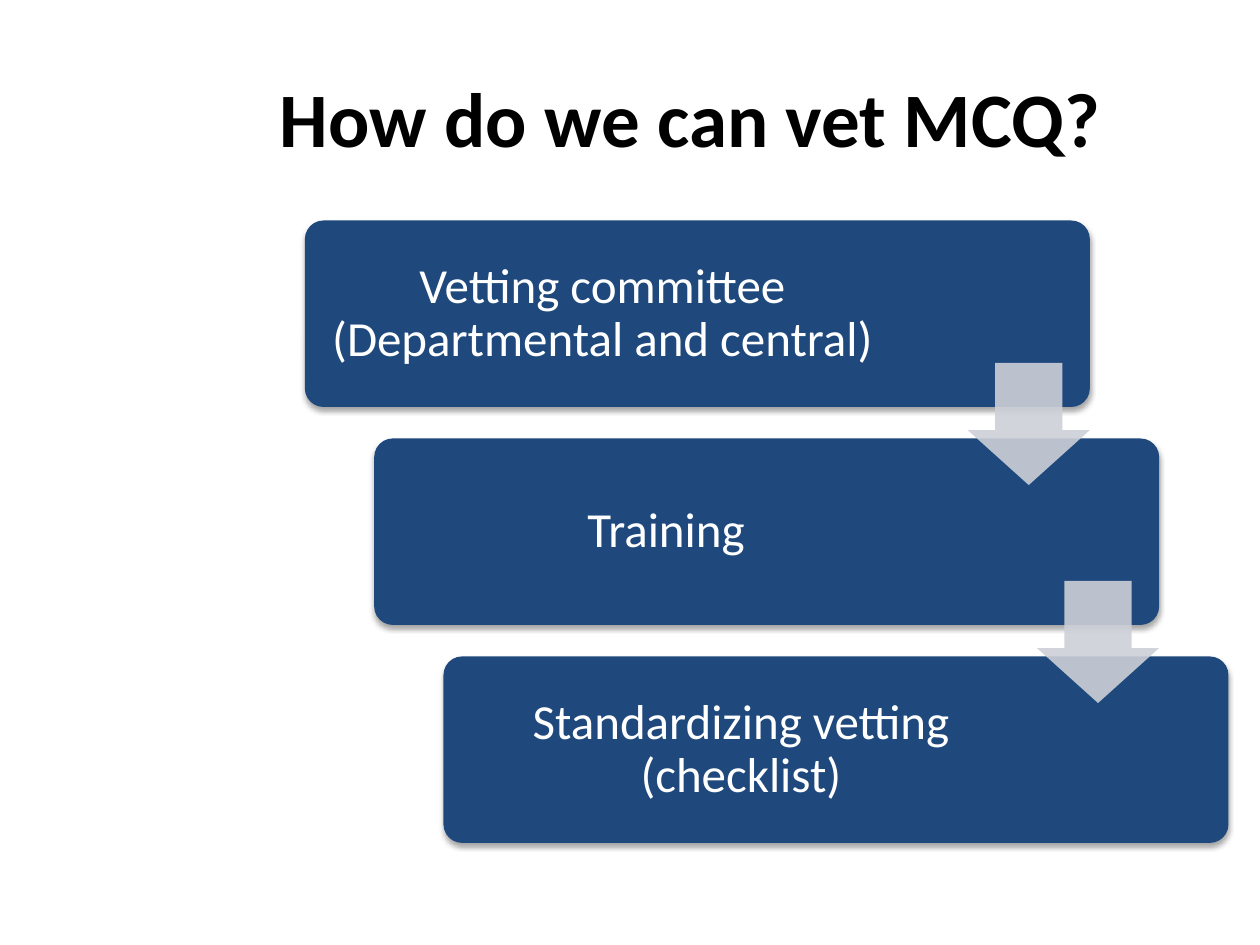
from lxml import etree
from pptx import Presentation
from pptx.dml.color import RGBColor
from pptx.enum.shapes import MSO_SHAPE as Shape
from pptx.enum.text import MSO_ANCHOR as Anchor, PP_ALIGN as Align
from pptx.oxml import parse_xml
from pptx.oxml.ns import nsdecls, qn
from pptx.util import Inches, Pt

NAVY = RGBColor(0x1F, 0x49, 0x7D)
GREY = RGBColor(0xCD, 0xD0, 0xD7)
BLACK = RGBColor(0, 0, 0)
WHITE = RGBColor(0xFF, 0xFF, 0xFF)

# Staircase of steps: first corner, shift per step, and sizes in inches
LEFT, TOP = 2.42, 1.75
DX, DY = 0.55, 1.73
WIDE, HIGH = 6.23, 1.48
TEXT_W = 4.72
ARROW = 0.97
ARROW_TOP = 2.88
STEPS = [
    "Vetting committee (Departmental and central)",
    "Training ",
    "Standardizing vetting (checklist)",
]


def put_text(frame, text, size=28, color=WHITE, bold=False, line=None, inset=None):
    frame.word_wrap = True
    frame.vertical_anchor = Anchor.MIDDLE
    if inset is not None:
        frame.margin_left = frame.margin_right = Inches(inset)
        frame.margin_top = frame.margin_bottom = Inches(inset)
    frame.text = text
    para = frame.paragraphs[0]
    para.alignment = Align.CENTER
    if line:
        para.line_spacing = line
    font = para.runs[0].font
    font.name, font.size, font.bold = "Calibri", Pt(size), bold
    font.color.rgb = color


class Deck:
    def __init__(self):
        self.prs = Presentation()
        self.prs.slide_width, self.prs.slide_height = Inches(10), Inches(7.5)
        self.slide = self.prs.slides.add_slide(self.prs.slide_layouts[5])
        self.group = self.slide.shapes.add_group_shape()

    def title(self, text, x, y, w, h):
        box = self.slide.shapes.title
        box.left, box.top, box.width, box.height = map(Inches, (x, y, w, h))
        put_text(box.text_frame, text, size=44, color=BLACK, bold=True)

    def shape(self, kind, x, y, w, h, fill, adjust):
        shape = self.group.shapes.add_shape(kind, *map(Inches, (x, y, w, h)))
        shape.shadow.inherit = False
        shape.fill.solid()
        shape.fill.fore_color.rgb = fill
        shape.line.fill.background()
        for i, value in enumerate(adjust):
            shape.adjustments[i] = value
        return shape

    def step(self, text, x, y):
        card = self.shape(Shape.ROUNDED_RECTANGLE, x, y, WIDE, HIGH, NAVY, [0.1])
        # Soft shadow straight below the card
        card._element.spPr.find(qn("a:effectLst")).append(parse_xml(
            f'<a:outerShdw {nsdecls("a")} blurRad="{Pt(3.1)}" dist="{Pt(1.8)}" '
            'dir="5400000" rotWithShape="0"><a:srgbClr val="000000">'
            '<a:alpha val="35000"/></a:srgbClr></a:outerShdw>'))
        box = self.group.shapes.add_textbox(*map(Inches, (x, y, TEXT_W, HIGH)))
        put_text(box.text_frame, text, line=0.9, inset=0.12)

    def arrow(self, x, y):
        arrow = self.shape(Shape.DOWN_ARROW, x, y, ARROW, ARROW, GREY, [0.55, 0.45])
        color = arrow._element.spPr.find(qn("a:solidFill"))[0]
        etree.SubElement(color, qn("a:alpha")).set("val", "90000")


def main():
    deck = Deck()
    deck.title("How do we can vet MCQ?", 0.98, 0.3, 9, 1.25)

    # Steps, each lower and further right
    for i, text in enumerate(STEPS):
        deck.step(text, LEFT + i * DX, TOP + i * DY)

    # Arrows on top, flush with the right edge of the step they leave
    for i in range(len(STEPS) - 1):
        deck.arrow(LEFT + WIDE - ARROW + i * DX, ARROW_TOP + i * DY)

    deck.prs.save("out.pptx")


if __name__ == "__main__":
    main()
